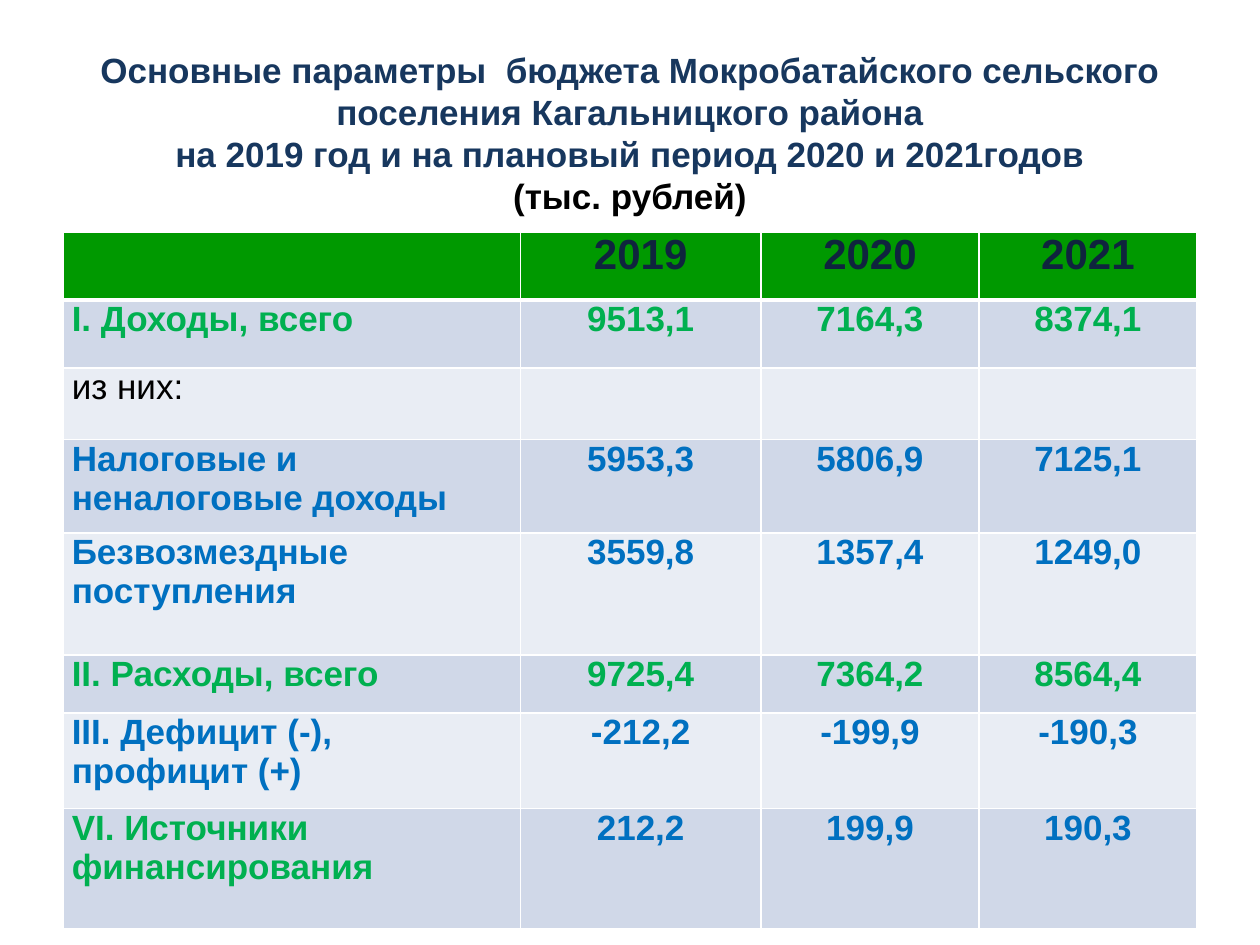
"""Build a slide with the main budget figures of a rural settlement."""
from dataclasses import dataclass

from lxml import etree
from pptx import Presentation
from pptx.dml.color import RGBColor
from pptx.enum.text import MSO_ANCHOR, PP_ALIGN
from pptx.oxml.ns import qn
from pptx.util import Inches, Pt

LEFT, CENTER = PP_ALIGN.LEFT, PP_ALIGN.CENTER
MIDDLE = MSO_ANCHOR.MIDDLE
TITLE_ONLY = 5


@dataclass(frozen=True)
class Theme:
    font: str = "Arial"
    title: str = "17375E"
    black: str = "000000"
    white: str = "FFFFFF"
    year: str = "0F243E"
    total: str = "00B050"
    detail: str = "0070C0"
    header_fill: str = "009900"
    odd_fill: str = "D0D8E8"
    even_fill: str = "E9EDF4"
    body_size: int = 20
    year_size: int = 24
    thin: int = 1
    thick: int = 3


@dataclass(frozen=True)
class BudgetRow:
    label: str
    values: tuple[str, str, str]
    height: float
    label_color: str
    value_color: str
    size: int
    bold: bool = True


THEME = Theme()
BODY = THEME.body_size
TITLE_LINES = (
    "Основные параметры  бюджета Мокробатайского сельского поселения Кагальницкого района",
    "на 2019 год и на плановый период 2020 и 2021годов",
    "(тыс. рублей)",
)
COLUMN_WIDTHS = (3.63, 1.91, 1.73, 1.73)
ROWS = (
    BudgetRow("", ("2019", "2020", "2021"), 0.54, THEME.year, THEME.year, THEME.year_size),
    BudgetRow("I. Доходы, всего", ("9513,1", "7164,3", "8374,1"), 0.54, THEME.total, THEME.total, BODY),
    BudgetRow("из них:", ("", "", ""), 0.57, THEME.black, THEME.black, BODY, False),
    BudgetRow("Налоговые и неналоговые доходы", ("5953,3", "5806,9", "7125,1"), 0.74,
              THEME.detail, THEME.detail, BODY),
    BudgetRow("Безвозмездные поступления", ("3559,8", "1357,4", "1249,0"), 0.97,
              THEME.detail, THEME.detail, BODY),
    BudgetRow("II. Расходы, всего", ("9725,4", "7364,2", "8564,4"), 0.46, THEME.total, THEME.total, BODY),
    BudgetRow("III. Дефицит (-), профицит (+)", ("-212,2", "-199,9", "-190,3"), 0.76,
              THEME.detail, THEME.detail, BODY),
    BudgetRow("VI. Источники финансирования", ("212,2", "199,9", "190,3"), 0.95,
              THEME.total, THEME.detail, BODY),
)


def format_span(span, size: int, color: str, bold: bool = True) -> None:
    """Give a run its typeface, size, colour and weight."""
    span.font.name = THEME.font
    span.font.size = Pt(size)
    span.font.bold = bold
    span.font.color.rgb = RGBColor.from_string(color)


def add_title(page) -> None:
    """Place the heading with its unit line in black."""
    box = page.shapes.title
    box.left, box.top, box.width, box.height = map(Inches, (0.5, 0.32, 9, 1.8))
    frame = box.text_frame
    frame.word_wrap = True
    frame.vertical_anchor = MIDDLE
    frame.margin_bottom = Inches(0.38)
    para = frame.paragraphs[0]
    para.text = "\v".join(TITLE_LINES)
    para.alignment = CENTER
    para.line_spacing = Pt(24)
    for span, color in zip(para.runs, (THEME.title, THEME.title, THEME.black)):
        format_span(span, BODY, color)


def set_borders(cell, top: int, bottom: int) -> None:
    """Draw white lines on the four sides of a cell."""
    properties = cell._tc.get_or_add_tcPr()
    widths = {"a:lnL": THEME.thin, "a:lnR": THEME.thin, "a:lnT": top, "a:lnB": bottom}
    for position, (tag, width) in enumerate(widths.items()):
        line = etree.Element(qn(tag), w=str(Pt(width)))
        fill = etree.SubElement(line, qn("a:solidFill"))
        etree.SubElement(fill, qn("a:srgbClr"), val=THEME.white)
        properties.insert(position, line)


def fill_cell(cell, text: str, row: BudgetRow, color: str, alignment: PP_ALIGN) -> None:
    """Write one cell in the style of its row."""
    cell.margin_left = cell.margin_right = Inches(0.07)
    cell.margin_top = cell.margin_bottom = 0
    para = cell.text_frame.paragraphs[0]
    para.text = text
    para.alignment = alignment
    for span in para.runs:
        format_span(span, row.size, color, row.bold)


def add_budget_table(page) -> None:
    """Build the table of budget figures by year."""
    frame = page.shapes.add_table(len(ROWS), len(COLUMN_WIDTHS), *map(Inches, (0.5, 1.84, 9, 5.53)))
    table = frame.table
    for column, width in zip(table.columns, COLUMN_WIDTHS):
        column.width = Inches(width)
    for index, row in enumerate(ROWS):
        table.rows[index].height = Inches(row.height)
        band = THEME.odd_fill if index % 2 else THEME.even_fill
        fill = band if index else THEME.header_fill
        top = THEME.thick if index == 1 else THEME.thin
        bottom = THEME.thin if index else THEME.thick
        for position, text in enumerate((row.label, *row.values)):
            cell = table.cell(index, position)
            color = row.value_color if position else row.label_color
            fill_cell(cell, text, row, color, CENTER if position else LEFT)
            cell.fill.solid()
            cell.fill.fore_color.rgb = RGBColor.from_string(fill)
            set_borders(cell, top, bottom)


def main() -> None:
    """Create the deck and save it."""
    deck = Presentation()
    deck.slide_width, deck.slide_height = Inches(10), Inches(7.5)
    page = deck.slides.add_slide(deck.slide_layouts[TITLE_ONLY])
    add_title(page)
    add_budget_table(page)
    deck.save("out.pptx")


if __name__ == "__main__":
    main()
